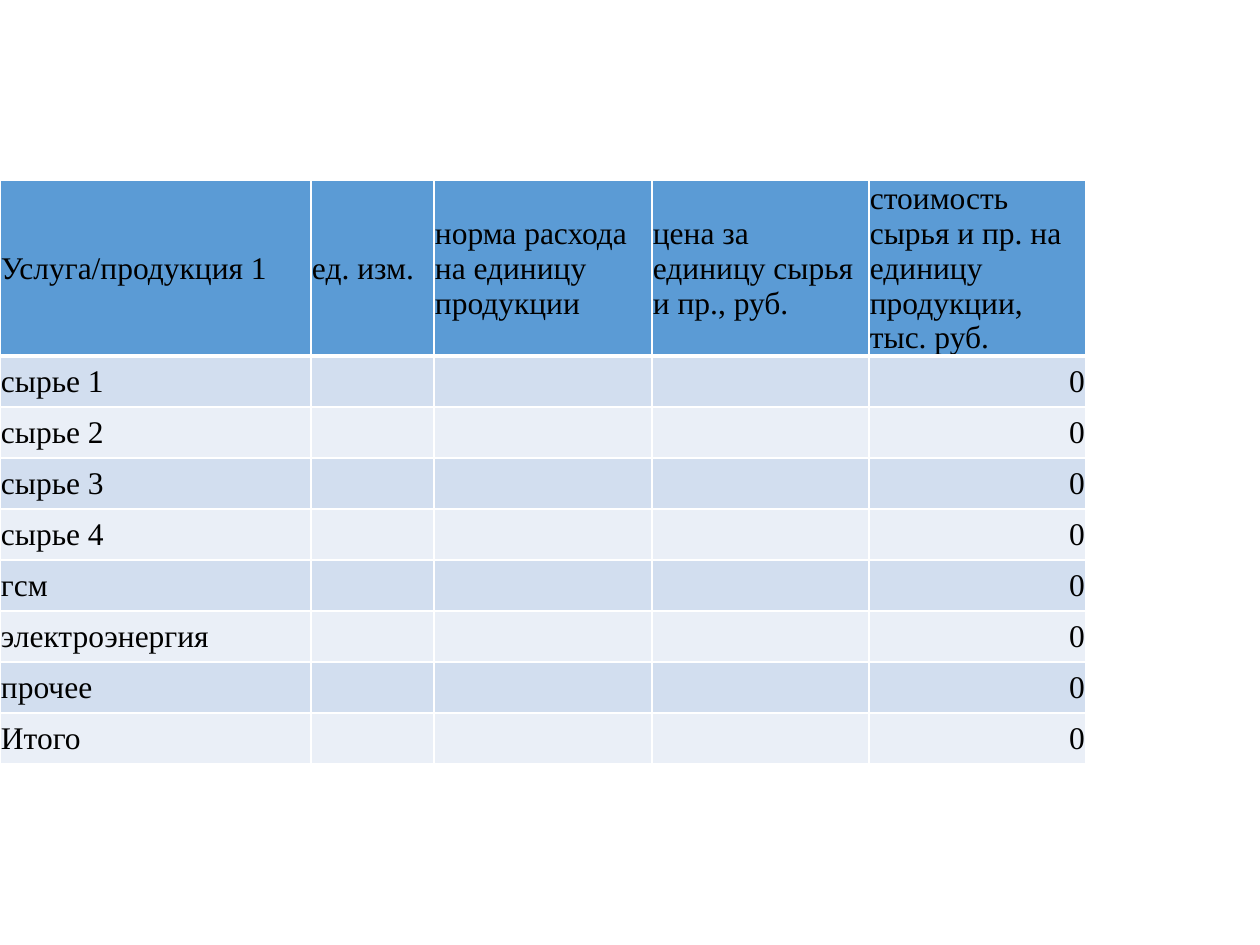
import dataclasses

import lxml.etree
import pptx
import pptx.dml.color
import pptx.enum.text
import pptx.oxml.ns
import pptx.util

SCALE = 914400 // 126


def px(n):
    return pptx.util.Emu(n * SCALE)


def rgb(code):
    return pptx.dml.color.RGBColor.from_string(code)


@dataclasses.dataclass
class Theme:
    font: str = "Times New Roman"
    size: int = 18
    ink: str = "000000"
    head: str = "5B9BD5"
    bands: tuple = ("D2DEEF", "EAEFF7")
    rule: str = "FFFFFF"
    thin: int = 1
    thick: int = 3


def write(frame, text, font, size, color, align=pptx.enum.text.PP_ALIGN.LEFT):
    frame.text = text
    para = frame.paragraphs[0]
    para.alignment = align
    para.font.name = font
    para.font.size = pptx.util.Pt(size)
    para.font.color.rgb = rgb(color)


class Deck:
    def __init__(self, theme, width, height):
        self.theme = theme
        self.show = pptx.Presentation()
        self.show.slide_width = px(width)
        self.show.slide_height = px(height)
        self.slide = self.show.slides.add_slide(self.show.slide_layouts[6])

    def edge(self, cell, side, width):
        qn = pptx.oxml.ns.qn
        props = cell._tc.get_or_add_tcPr()
        line = lxml.etree.SubElement(
            props, qn("a:ln" + side), w=str(pptx.util.Pt(width))
        )
        fill = lxml.etree.SubElement(line, qn("a:solidFill"))
        lxml.etree.SubElement(fill, qn("a:srgbClr"), val=self.theme.rule)

    def cell(self, cell, text, row, align):
        theme = self.theme
        cell.margin_left = cell.margin_right = cell.margin_top = px(1)
        cell.margin_bottom = 0
        cell.vertical_anchor = pptx.enum.text.MSO_ANCHOR.MIDDLE
        top = theme.thick if row == 1 else theme.thin
        low = theme.thick if row == 0 else theme.thin
        for side, width in zip("LRTB", (theme.thin, theme.thin, top, low)):
            self.edge(cell, side, width)
        cell.fill.solid()
        cell.fill.fore_color.rgb = rgb(
            theme.bands[(row - 1) % 2] if row else theme.head
        )
        write(cell.text_frame, text, font=theme.font, size=theme.size,
              color=theme.ink, align=align)

    def table(self, left, top, cols, rows, data):
        frame = self.slide.shapes.add_table(
            len(rows), len(cols), px(left), px(top), px(sum(cols)), px(sum(rows))
        )
        grid = frame.table
        for col, width in zip(grid.columns, cols):
            col.width = px(width)
        for row, height in zip(grid.rows, rows):
            row.height = px(height)
        kinds = pptx.enum.text.PP_ALIGN
        last = len(cols) - 1
        for r, line in enumerate(data):
            for c, text in enumerate(line):
                align = kinds.RIGHT if r and c == last else kinds.LEFT
                self.cell(grid.cell(r, c), text, r, align)


def main():
    heads = [
        "Услуга/продукция 1",
        "ед. изм.",
        "норма расхода на единицу продукции",
        "цена за единицу сырья и пр., руб.",
        "стоимость сырья и пр. на единицу продукции, тыс. руб.",
    ]
    items = ["сырье 1", "сырье 2", "сырье 3", "сырье 4",
             "гсм", "электроэнергия", "прочее", "Итого"]
    data = [heads] + [[item, "", "", "", "0"] for item in items]
    deck = Deck(Theme(), 1260, 945)
    deck.table(0, 180, cols=[311, 123, 218, 217, 217],
               rows=[176] + [51] * len(items), data=data)
    deck.show.save("out.pptx")


if __name__ == "__main__":
    main()
